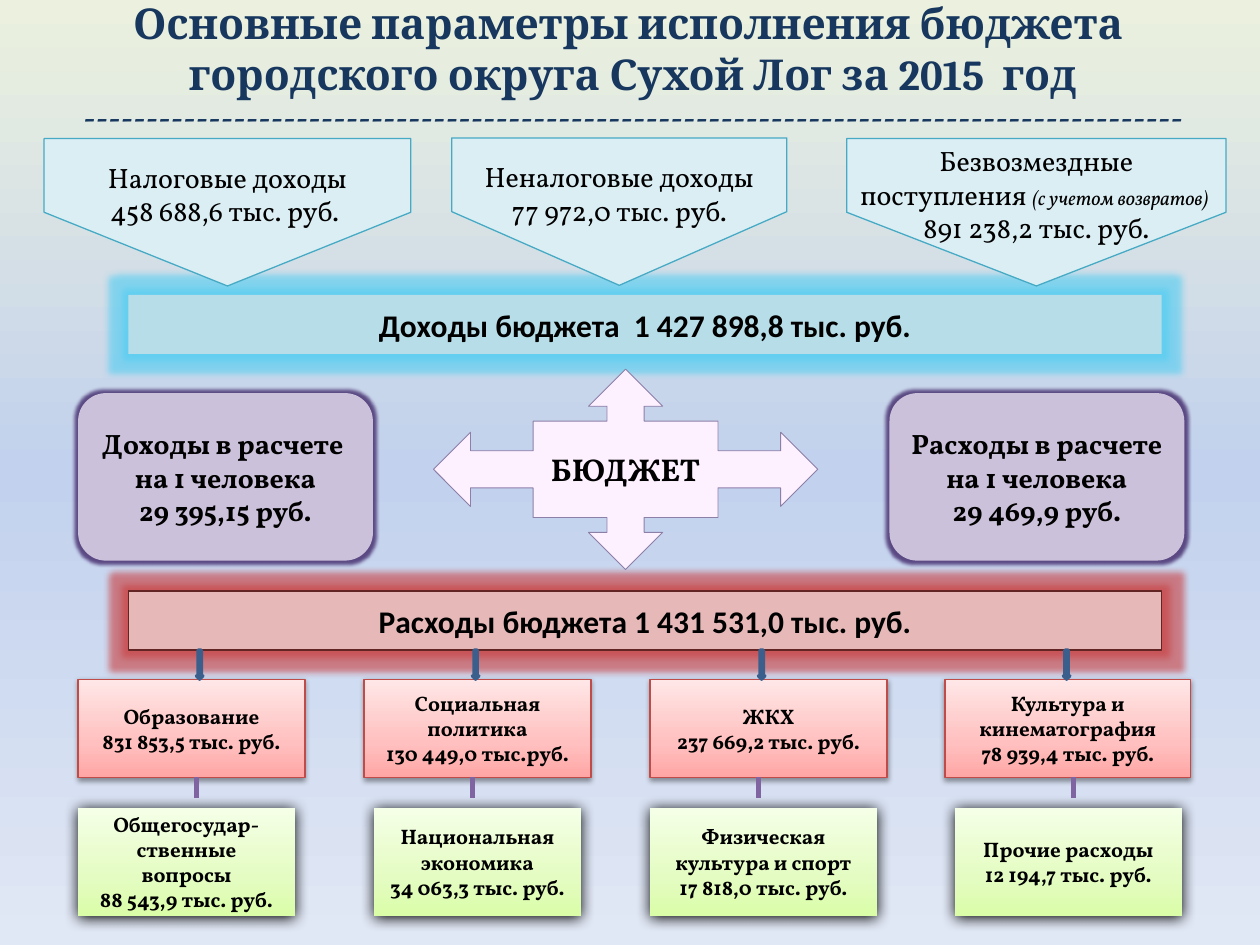
import pptx
import pptx.util
import pptx.dml.color
import pptx.enum.shapes
import pptx.enum.text
import pptx.oxml.ns
from lxml import etree

PX = 9144  # 100 px to the inch
SHAPE = pptx.enum.shapes.MSO_SHAPE
qn = pptx.oxml.ns.qn
rgb = pptx.dml.color.RGBColor.from_string
CENTER = pptx.enum.text.PP_ALIGN.CENTER
MIDDLE = pptx.enum.text.MSO_ANCHOR.MIDDLE
COLORS = {
    "title": "17375E", "text": "000000", "budget": "FDF0FF", "budget_line": "8C7FA8",
    "income": "B7DEE8", "income_glow": "4FCDF2", "expense": "E6B9B8",
    "expense_line": "632523", "expense_glow": "C83C3C", "source": "DBEEF4",
    "source_line": "46AAC5", "person": "CCC1DA", "person_glow": "4F3A78",
    "item_line": "BF4C48", "arrow": "4F81BD", "arrow_line": "3A5F8C", "link": "8064A2",
}
BACKGROUND = [(0, "EBF1DE"), (50, "C2D1ED"), (100, "E1E8F5")]
RED = [(0, "FFA6A5"), (35, "FFC0BF"), (100, "FFE7E7")]
GREEN = [(0, "DAFDA7"), (35, "E4FCC2"), (100, "F5FFE7")]


def set_gradient(fill, element, stops, angle):
    fill.gradient()
    fill.gradient_angle = angle
    stop_list = next(element.iter(qn("a:gsLst")))
    for old in list(stop_list):
        stop_list.remove(old)
    for position, color in stops:
        stop = etree.SubElement(stop_list, qn("a:gs"), pos=str(position * 1000))
        etree.SubElement(stop, qn("a:srgbClr"), val=color)


def add_box(kind, x, y, w, h, fill, lines=(), size=16, font="Vollkorn", bold=True,
            line=None, weight=0.75, effect=None):
    """effect is (tag, colour, alpha in percent, attributes)."""
    sp = s.shapes.add_shape(kind, x * PX, y * PX, w * PX, h * PX)
    sp.shadow.inherit = False
    if isinstance(fill, list):
        set_gradient(sp.fill, sp.element, fill, 90)
    else:
        sp.fill.solid()
        sp.fill.fore_color.rgb = rgb(COLORS[fill])
    if line:
        sp.line.color.rgb = rgb(COLORS[line])
        sp.line.width = pptx.util.Pt(weight)
    else:
        sp.line.fill.background()
    if effect:
        tag, color, alpha, attributes = effect
        node = etree.SubElement(next(sp.element.iter(qn("a:effectLst"))), qn(tag), attributes)
        color_node = etree.SubElement(node, qn("a:srgbClr"), val=color)
        etree.SubElement(color_node, qn("a:alpha"), val=str(alpha * 1000))
    tf = sp.text_frame
    tf.word_wrap = True
    tf.vertical_anchor = MIDDLE
    for i, text in enumerate(lines):
        p = tf.paragraphs[0] if i == 0 else tf.add_paragraph()
        p.alignment = CENTER
        r = p.add_run()
        r.text = text
        for name, value in {"size": pptx.util.Pt(size), "name": font, "bold": bold}.items():
            setattr(r.font, name, value)
        r.font.color.rgb = rgb(COLORS["text"])
    return sp


downward = {"dir": "5400000", "rotWithShape": "0"}
SOFT = ("a:outerShdw", "000000", 38, {"blurRad": "39370", "dist": "20320", **downward})
DARK = ("a:outerShdw", "000000", 100, {"blurRad": "107950", "dist": "12700", **downward})
PURPLE = ("a:glow", COLORS["person_glow"], 90, {"rad": "50800"})

prs = pptx.Presentation()
prs.slide_width, prs.slide_height = 1000 * PX, 750 * PX
s = prs.slides.add_slide(prs.slide_layouts[5])
set_gradient(s.background.fill, s.element, BACKGROUND, 270)

# Title with its dashed rule
title = s.shapes.title
title.left, title.top, title.width, title.height = 55 * PX, 0, 895 * PX, 104 * PX
tf = title.text_frame
tf.word_wrap = True
tf.vertical_anchor = MIDDLE
tf.margin_top = tf.margin_bottom = 0
p = tf.paragraphs[0]
p.alignment = CENTER
for i, (text, font, size) in enumerate([
        ("Основные параметры исполнения бюджета ", "Cambria", 24.3),
        ("городского округа Сухой Лог за 2015  год", "Cambria", 24.3),
        ("-" * 88, "Vollkorn", 17.1)]):
    if i:
        p.add_line_break()
    r = p.add_run()
    r.text = text
    for name, value in {"size": pptx.util.Pt(size), "name": font, "bold": True}.items():
        setattr(r.font, name, value)
    r.font.color.rgb = rgb(COLORS["title"])

# Total bars
for y, text, fill, line, glow in [
        (234, "Доходы бюджета  1 427 898,8 тыс. руб.", "income", None, "income_glow"),
        (469, "Расходы бюджета 1 431 531,0 тыс. руб.", "expense", "expense_line",
         "expense_glow")]:
    add_box(SHAPE.RECTANGLE, 102, y, 820, 47, fill, [text], 18, "Calibri", line=line,
            effect=("a:glow", COLORS[glow], 60, {"rad": "101600"}))

# Budget in the middle
add_box(SHAPE.QUAD_ARROW_CALLOUT, 344, 293, 305, 159, "budget", ["БЮДЖЕТ"], 18,
        line="budget_line", weight=0.5)

# Income sources: pentagons turned to point down, with upright text
top, depth = 110, 117
for x, width, lines, note in [
        (35, 291, ["Налоговые доходы", "458 688,6 тыс. руб. "], None),
        (359, 266, ["Неналоговые доходы", "77 972,0 тыс. руб."], None),
        (672, 301, ["Безвозмездные поступления ", "891 238,2 тыс. руб."],
         "(с учетом возвратов) ")]:
    sp = add_box(SHAPE.PENTAGON, x + (width - depth) // 2, top + (depth - width) // 2,
                 depth, width, "source", lines, bold=False, line="source_line")
    sp.rotation = 90
    next(sp.element.iter(qn("a:bodyPr"))).set("vert", "vert270")
    if note:
        r = sp.text_frame.paragraphs[0].add_run()
        r.text = note
        for name, value in {"size": pptx.util.Pt(11.5), "name": "Vollkorn",
                            "italic": True}.items():
            setattr(r.font, name, value)
        r.font.color.rgb = rgb(COLORS["text"])

# Amounts per person
for x, name, amount in [(62, "Доходы", "29 395,15 руб."), (706, "Расходы", "29 469,9 руб.")]:
    add_box(SHAPE.ROUNDED_RECTANGLE, x, 312, 234, 133, "person",
            [f"{name} в расчете ", "на 1 человека", amount], effect=PURPLE)

# Expense items in two rows
for y, height, fill, line, effect, items in [
        (539, 78, RED, "item_line", SOFT, [
            (62, 180, ["Образование", "831 853,5 тыс. руб."]),
            (289, 180, ["Социальная политика", "130 449,0 тыс.руб."]),
            (516, 188, ["ЖКХ", "237 669,2 тыс. руб."]),
            (750, 195, ["Культура и кинематография", "78 939,4 тыс. руб."])]),
        (641, 86, GREEN, None, DARK, [
            (62, 172, ["Общегосудар-", "ственные вопросы", "88 543,9 тыс. руб."]),
            (297, 164, ["Национальная экономика", "34 063,3 тыс. руб."]),
            (516, 180, ["Физическая культура и спорт", "17 818,0 тыс. руб."]),
            (758, 180, ["Прочие расходы", "12 194,7 тыс. руб."])])]:
    for x, width, lines in items:
        sp = add_box(SHAPE.PENTAGON, x, y, width, height, fill, lines, 12,
                     line=line, effect=effect)
        sp.adjustments[0] = 0

# Arrows from the expense bar and links between the rows
for arrow_x, link_x in [(156, 156), (375, 375), (602, 602), (844, 852)]:
    add_box(SHAPE.DOWN_ARROW, arrow_x, 516, 5, 23, "arrow", line="arrow_line", weight=2)
    link = s.shapes.add_connector(pptx.enum.shapes.MSO_CONNECTOR.STRAIGHT,
                                  link_x * PX, 617 * PX, link_x * PX, 633 * PX)
    link.line.color.rgb = rgb(COLORS["link"])
    link.line.width = pptx.util.Pt(3)
    etree.SubElement(next(link.element.iter(qn("p:spPr"))), qn("a:effectLst"))

prs.save("out.pptx")
